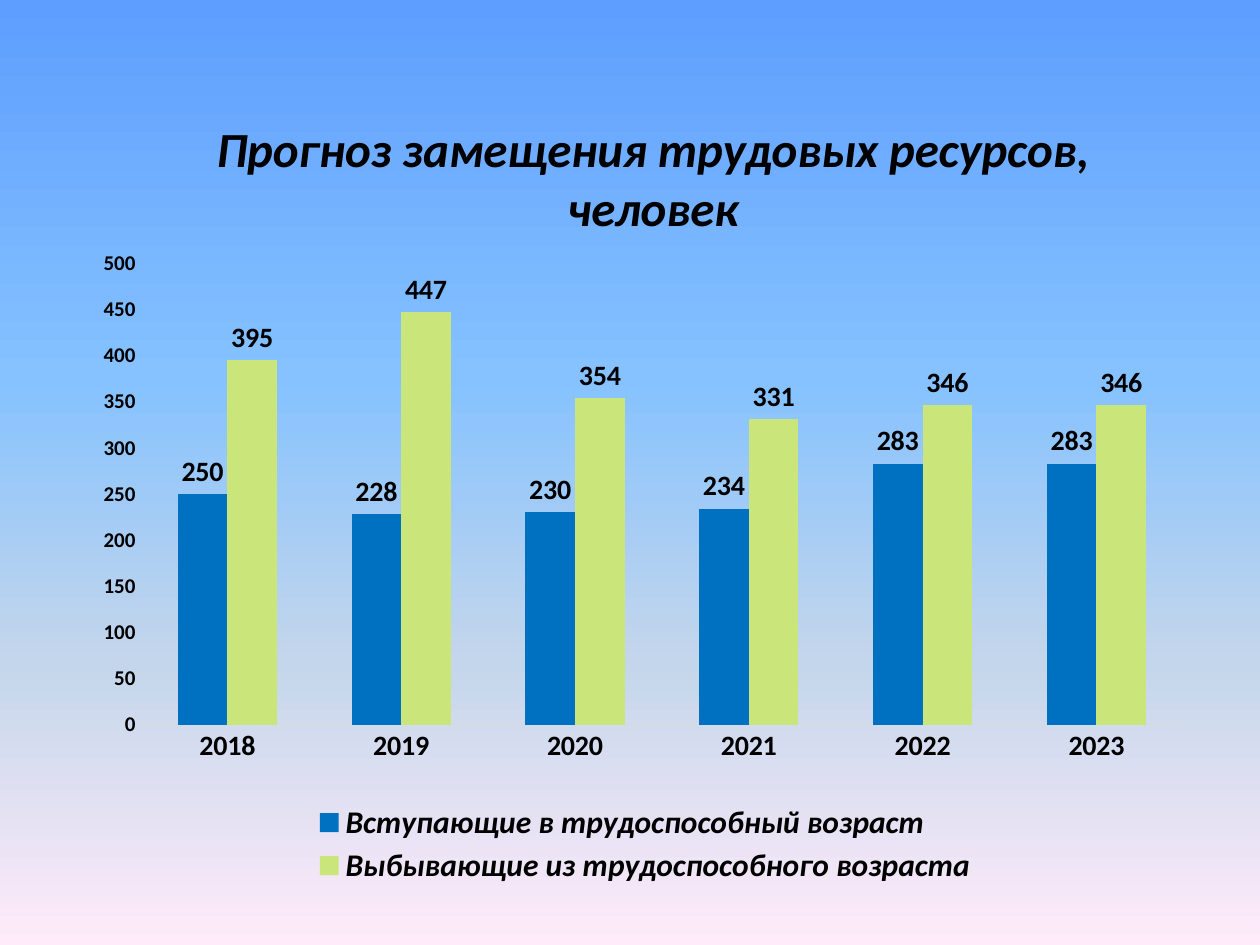
from copy import deepcopy
from dataclasses import dataclass

from lxml import etree
from pptx import Presentation
from pptx.chart.data import CategoryChartData
from pptx.dml.color import RGBColor
from pptx.enum import chart as ch
from pptx.oxml.ns import qn
from pptx.util import Inches, Pt


@dataclass(frozen=True)
class Theme:
    """Colours, font and type sizes of the slide."""
    font: str = "Calibri"
    ink: str = "000000"
    axis_line: str = "D9D9D9"
    entering: str = "0070C0"
    leaving: str = "CAE67B"
    sky: tuple = ((0, "5E9EFF"), (0.4, "85C2FF"), (0.7, "C4D6EB"), (1, "FFEBFA"))
    title: int = 28
    legend: int = 18
    label: int = 16
    scale: int = 12


THEME = Theme()
YEARS = ["2018", "2019", "2020", "2021", "2022", "2023"]
FLOWS = [
    ("Вступающие в трудоспособный возраст", THEME.entering,
     (250, 228, 230, 234, 283, 283)),
    ("Выбывающие из трудоспособного возраста", THEME.leaving,
     (395, 447, 354, 331, 346, 346)),
]


def style_font(font, size, italic=False):
    """Apply the bold theme font at the given size."""
    font.name, font.size = THEME.font, Pt(size)
    font.bold, font.italic = True, italic
    font.color.rgb = RGBColor.from_string(THEME.ink)


def paint_background(slide):
    """Fill the slide with the vertical sky gradient."""
    fill = slide.background.fill
    fill.gradient()
    fill.gradient_angle = 270
    stop_list = slide.element.xpath(".//a:gsLst")[0]
    while len(stop_list) < len(THEME.sky):
        stop_list.append(deepcopy(stop_list[0]))
    for stop, (position, colour) in zip(fill.gradient_stops, THEME.sky):
        stop.position = position
        stop.color.rgb = RGBColor.from_string(colour)


def place_part(part, index, inner=False, **fractions):
    """Pin a chart part at fractions of the chart area."""
    for old in part.findall(qn("c:layout")):
        part.remove(old)
    layout = etree.Element(qn("c:layout"))
    manual = etree.SubElement(layout, qn("c:manualLayout"))
    if inner:
        etree.SubElement(manual, qn("c:layoutTarget"), val="inner")
    for mode in ("xMode", "yMode"):
        etree.SubElement(manual, qn(f"c:{mode}"), val="edge")
    for side, fraction in fractions.items():
        etree.SubElement(manual, qn(f"c:{side}"), val=str(fraction))
    part.insert(index, layout)


def add_forecast(slide):
    """Add the clustered columns for both age flows."""
    forecast = CategoryChartData(number_format="General")
    forecast.categories = YEARS
    for name, _, people in FLOWS:
        forecast.add_series(name, people)
    chart = slide.shapes.add_chart(
        ch.XL_CHART_TYPE.COLUMN_CLUSTERED, Inches(0.67), Inches(0.52),
        Inches(8.9), Inches(6.54), forecast).chart
    plot = chart.plots[0]
    plot.gap_width, plot.overlap = 150, 0
    plot.vary_by_categories = False
    for series, (_, colour, _) in zip(plot.series, FLOWS):
        series.format.fill.solid()
        series.format.fill.fore_color.rgb = RGBColor.from_string(colour)
        labels = series.data_labels
        labels.show_value = True
        labels.position = ch.XL_LABEL_POSITION.OUTSIDE_END
        style_font(labels.font, THEME.label)
    place_part(chart.element.xpath(".//c:plotArea")[0], 0, inner=True,
               x=0.05, y=0.24, w=0.93, h=0.56)
    return chart


def format_axes(chart):
    """Style the year axis and the people scale."""
    years, people = chart.category_axis, chart.value_axis
    for axis, size in ((years, THEME.label), (people, THEME.scale)):
        axis.major_tick_mark = axis.minor_tick_mark = ch.XL_TICK_MARK.NONE
        axis.has_major_gridlines = False
        style_font(axis.tick_labels.font, size)
    years.format.line.color.rgb = RGBColor.from_string(THEME.axis_line)
    years.format.line.width = Pt(0.75)
    people.format.line.fill.background()
    people.minimum_scale, people.maximum_scale, people.major_unit = 0, 500, 50


def add_captions(chart):
    """Add the chart title and the legend below the columns."""
    chart.has_title = True
    heading = chart.chart_title.text_frame
    heading.text = "Прогноз замещения трудовых ресурсов, человек"
    style_font(heading.paragraphs[0].runs[0].font, THEME.title, italic=True)
    place_part(chart.chart_title.element, 1, x=0.11, y=0.05)
    chart.has_legend = True
    legend = chart.legend
    legend.position = ch.XL_LEGEND_POSITION.BOTTOM
    legend.include_in_layout = False
    style_font(legend.font, THEME.legend, italic=True)
    place_part(chart.element.xpath(".//c:legend")[0], 1,
               x=0.2, y=0.89, w=0.6, h=0.11)


def main():
    """Build and save the slide."""
    deck = Presentation()
    deck.slide_width, deck.slide_height = Inches(10), Inches(7.5)
    slide = deck.slides.add_slide(deck.slide_layouts[6])
    paint_background(slide)
    chart = add_forecast(slide)
    format_axes(chart)
    add_captions(chart)
    deck.save("out.pptx")


if __name__ == "__main__":
    main()
